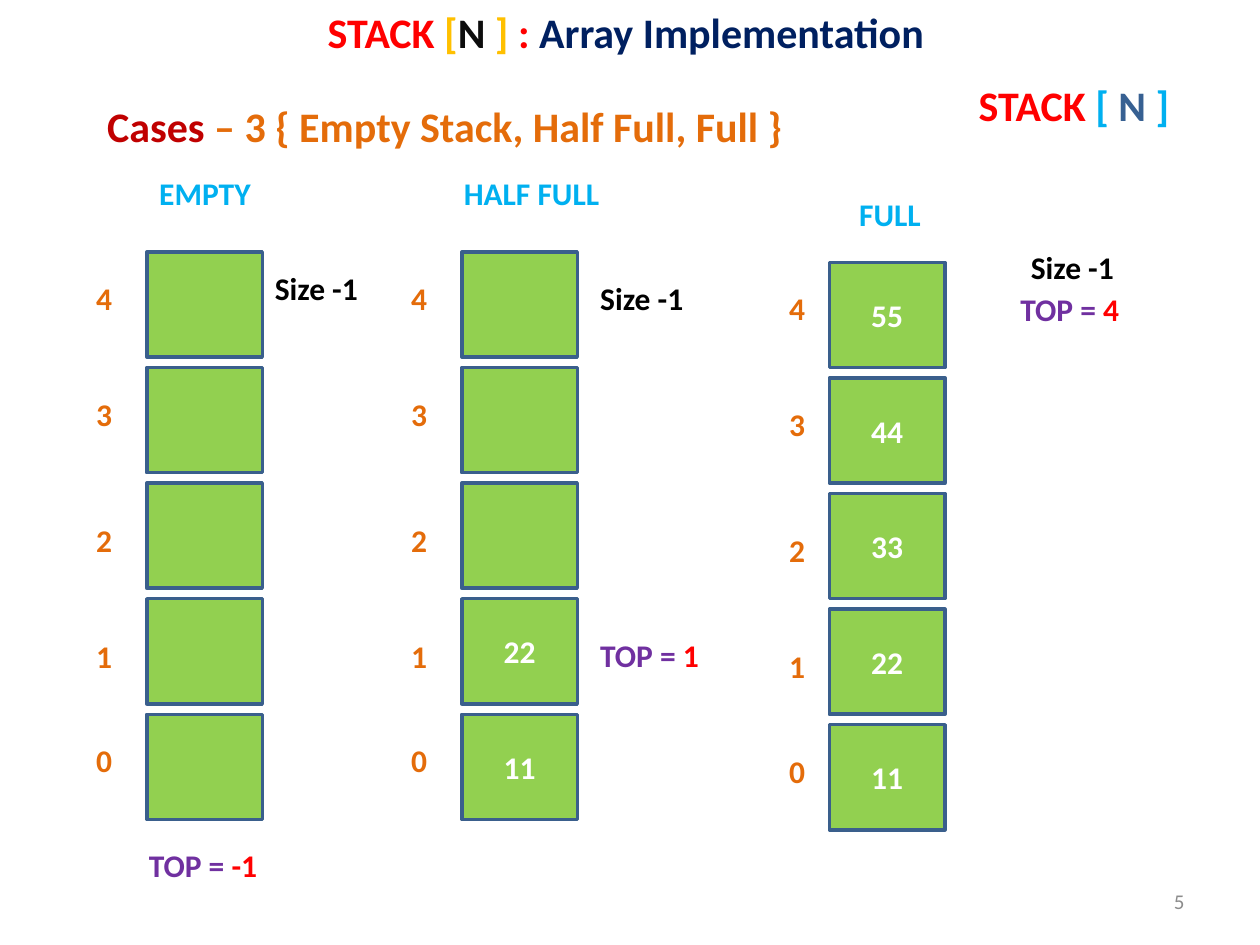
from pptx import Presentation
from pptx.dml.color import RGBColor
from pptx.enum.shapes import MSO_SHAPE
from pptx.enum.text import MSO_ANCHOR, MSO_AUTO_SIZE, PP_ALIGN
from pptx.util import Cm, Pt

RECTANGLE = MSO_SHAPE.RECTANGLE
TOP, MIDDLE = MSO_ANCHOR.TOP, MSO_ANCHOR.MIDDLE
LEFT, CENTER, RIGHT = PP_ALIGN.LEFT, PP_ALIGN.CENTER, PP_ALIGN.RIGHT
GROW, FIXED = MSO_AUTO_SIZE.SHAPE_TO_FIT_TEXT, MSO_AUTO_SIZE.NONE

FONT = "Calibri"
TITLE_ONLY = 5
COLORS = {
    "red": "FF0000", "dark_red": "C00000", "gold": "FFC000", "ink": "0D0D0D",
    "black": "000000", "navy": "002060", "sky": "00B0F0", "steel": "376092",
    "orange": "E46C0A", "purple": "7030A0", "green": "92D050",
    "border": "3A5F8C", "white": "FFFFFF", "gray": "8C8C8C",
}

# All lengths are in centimetres.
CELL_WIDTH, CELL_HEIGHT, CELL_PITCH = 2.33, 2.12, 2.33
LABEL_HEIGHT, INDEX_WIDTH, SIZE_WIDTH = 1.02, 0.84, 2.18
INDEX_OFFSETS = [0.42, 0.42, 0.64, 0.64, 0.42]

# Cell values run from index 4 down to index 0.
STACKS = [
    {"cells_at": (2.96, 5.08), "index_left": 1.69, "values": ["", "", "", "", ""],
     "name": "EMPTY", "name_box": (2.96, 3.39, 2.39),
     "top": "-1", "top_box": (2.75, 16.93, 2.72), "size_at": (5.29, 5.29)},
    {"cells_at": (9.31, 5.08), "index_left": 8.04, "values": ["", "", "", "22", "11"],
     "name": "HALF FULL", "name_box": (9.1, 3.39, 3.28),
     "top": "1", "top_box": (11.85, 12.7, 2.51), "size_at": (11.85, 5.5)},
    {"cells_at": (16.72, 5.29), "index_left": 15.66,
     "values": ["55", "44", "33", "22", "11"],
     "name": "FULL", "name_box": (17.07, 3.81, 1.78),
     "top": "4", "top_box": (20.32, 5.72, 2.51), "size_at": (20.53, 4.87)},
]


def rgb(color):
    return RGBColor.from_string(COLORS[color])


def apply_format(target, settings):
    for attribute, value in settings.items():
        setattr(target, attribute, value)


def write_runs(shape, runs, size=18, bold=True, align=LEFT, anchor=TOP,
               wrap=False, auto_size=GROW):
    """Fill a shape with one paragraph of (text, color) runs."""
    frame = shape.text_frame
    apply_format(frame, {"word_wrap": wrap, "auto_size": auto_size,
                         "vertical_anchor": anchor})
    paragraph = frame.paragraphs[0]
    paragraph.alignment = align
    for text, color in runs:
        run = paragraph.add_run()
        run.text = text
        apply_format(run.font, {"name": FONT, "size": Pt(size), "bold": bold})
        run.font.color.rgb = rgb(color)


def add_label(shapes, left, top, width, runs, height=LABEL_HEIGHT, **text_format):
    label = shapes.add_textbox(Cm(left), Cm(top), Cm(width), Cm(height))
    write_runs(label, runs, **text_format)


def add_cell(shapes, left, top, value):
    cell = shapes.add_shape(RECTANGLE, Cm(left), Cm(top),
                            Cm(CELL_WIDTH), Cm(CELL_HEIGHT))
    cell.shadow.inherit = False
    cell.fill.solid()
    cell.fill.fore_color.rgb = rgb("green")
    cell.line.color.rgb = rgb("border")
    cell.line.width = Pt(2)
    if value:
        write_runs(cell, [(value, "white")], align=CENTER, anchor=MIDDLE,
                   wrap=True, auto_size=FIXED)


def add_stack(slide, stack):
    """Draw one grouped stack: cells, index labels, name, size and top."""
    shapes = slide.shapes.add_group_shape().shapes
    left, first_top = stack["cells_at"]
    last_index = len(stack["values"]) - 1
    for row, (value, offset) in enumerate(zip(stack["values"], INDEX_OFFSETS)):
        cell_top = first_top + row * CELL_PITCH
        add_cell(shapes, left, cell_top, value)
        add_label(shapes, stack["index_left"], cell_top + offset, INDEX_WIDTH,
                  [(str(last_index - row), "orange")])
    add_label(shapes, *stack["name_box"], [(stack["name"], "sky")])
    add_label(shapes, *stack["top_box"],
              [("TOP = ", "purple"), (stack["top"], "red")])
    add_label(shapes, *stack["size_at"], SIZE_WIDTH, [("Size -1", "black")])


def set_title(slide):
    title = slide.shapes.title
    apply_format(title, {"left": Cm(6.35), "top": Cm(0),
                         "width": Cm(12.83), "height": Cm(1.27)})
    write_runs(title, [("STACK ", "red"), ("[", "gold"), ("N ", "ink"),
                       ("]", "gold"), (" : ", "red"),
                       ("Array Implementation", "navy")], size=24)


def main():
    presentation = Presentation()
    apply_format(presentation, {"slide_width": Cm(25.4), "slide_height": Cm(19.05)})
    slide = presentation.slides.add_slide(presentation.slide_layouts[TITLE_ONLY])
    set_title(slide)
    add_label(slide.shapes, 19.48, 1.48, 4.39,
              [("STACK ", "red"), ("[ ", "sky"), ("N ", "steel"), ("]", "sky")],
              height=1.27, size=24)
    add_label(slide.shapes, 1.91, 1.91, 14.25,
              [("Cases ", "dark_red"),
               ("– 3 { Empty Stack, Half Full, Full }", "orange")],
              height=1.27, size=24)
    for stack in STACKS:
        add_stack(slide, stack)
    add_label(slide.shapes, 18.2, 17.65, 5.93, [("5", "gray")], size=12, bold=False,
              align=RIGHT, anchor=MIDDLE, wrap=True, auto_size=FIXED)
    presentation.save("out.pptx")


if __name__ == "__main__":
    main()
